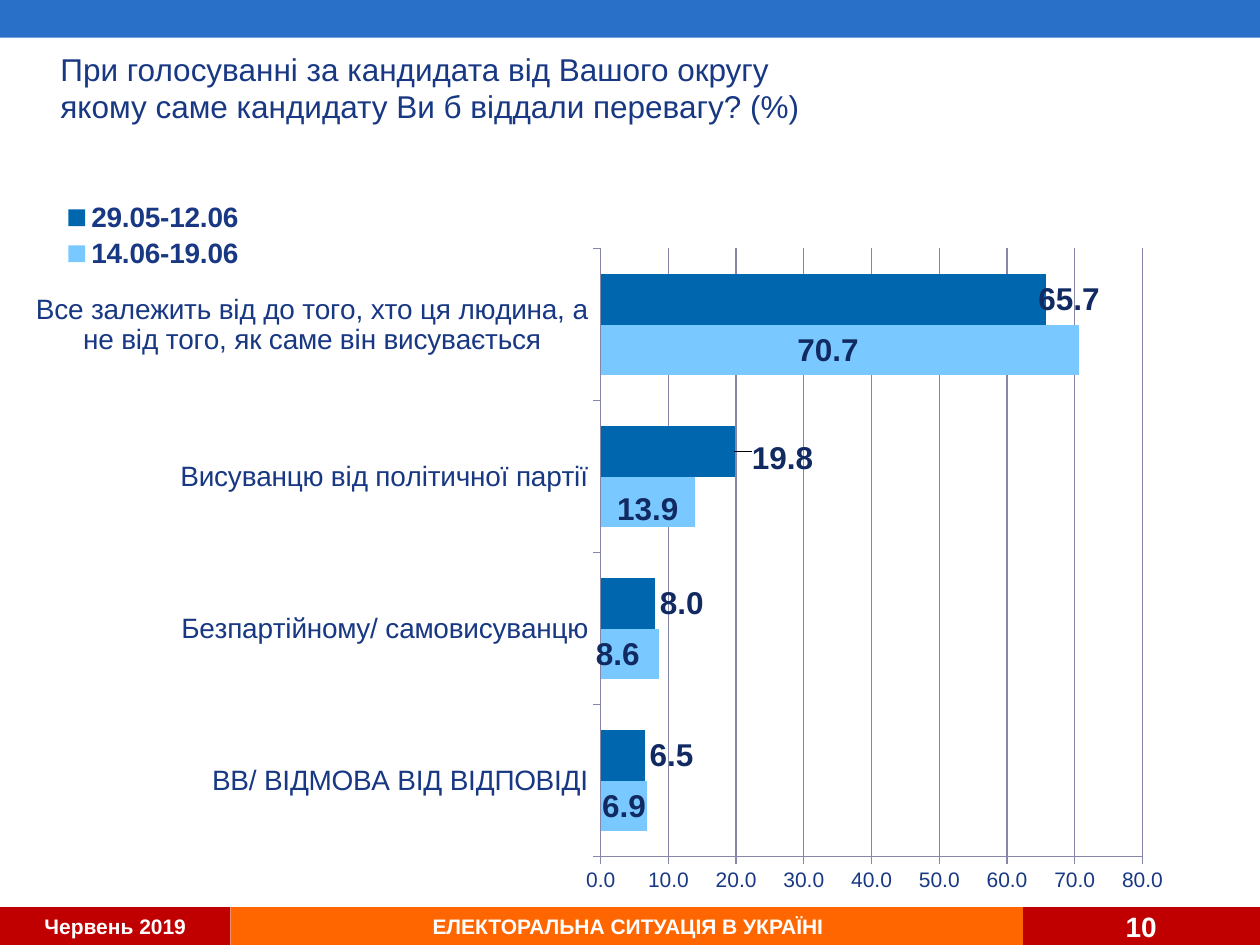
from lxml import etree
from pptx import Presentation
from pptx import util as u
from pptx.chart import data as chart_data
from pptx.dml.color import RGBColor
from pptx.enum import chart as ch, shapes, text
from pptx.oxml import ns

NAVY = RGBColor(0x18, 0x38, 0x83)
LABEL_NAVY = RGBColor(0x12, 0x2A, 0x62)
BLUE = RGBColor(0x28, 0x70, 0xC8)
RED = RGBColor(0xC0, 0x00, 0x00)
ORANGE = RGBColor(0xFF, 0x66, 0x00)
WHITE = RGBColor(0xFF, 0xFF, 0xFF)
LIGHT_BAR = RGBColor(0x79, 0xC8, 0xFF)
DARK_BAR = RGBColor(0x00, 0x67, 0xAF)
GRID_GREY = RGBColor(0x86, 0x86, 0xA8)

WIDTH, HEIGHT = 10, 7.5
BAND = 0.04  # share of the slide height taken by the top and bottom bands

CATEGORIES = [
    "ВВ/ ВІДМОВА ВІД ВІДПОВІДІ",
    "Безпартійному/ самовисуванцю",
    "Висуванцю від політичної партії",
    "Все залежить від до того, хто ця людина, а не від того, як саме він висувається",
]
# Label shifts are shares of the chart's size, keyed by category index.
SERIES = [
    dict(name="14.06-19.06", values=(6.9, 8.6, 13.9, 70.7), color=LIGHT_BAR,
         position=ch.XL_LABEL_POSITION.CENTER,
         shifts={0: (0, 0), 1: (-0.01, 0), 2: (0, 0.01), 3: (-0.01, 0)}),
    dict(name="29.05-12.06", values=(6.5, 8, 19.8, 65.7), color=DARK_BAR,
         position=ch.XL_LABEL_POSITION.OUTSIDE_END,
         shifts={2: (0.01, 0.01), 3: (-0.01, 0)}),
]


def box(left, top, width, height):
    """Turn shares of the slide's size into lengths."""
    return (u.Inches(left * WIDTH), u.Inches(top * HEIGHT),
            u.Inches(width * WIDTH), u.Inches(height * HEIGHT))


def apply(target, **values):
    for name, value in values.items():
        setattr(target, name, value)


def format_font(font, size, color, bold=False):
    apply(font, name="Arial", size=u.Pt(size), bold=bold)
    font.color.rgb = color


def add_band(slide, place, fill, label="", size=12,
             align=text.PP_ALIGN.CENTER, margin_right=0.1):
    shape = slide.shapes.add_shape(shapes.MSO_SHAPE.RECTANGLE, *box(*place))
    shape.shadow.inherit = False
    shape.fill.solid()
    shape.fill.fore_color.rgb = fill
    shape.line.fill.background()
    if label:
        frame = shape.text_frame
        apply(frame, word_wrap=True, vertical_anchor=text.MSO_ANCHOR.MIDDLE,
              margin_top=0, margin_bottom=0, margin_right=u.Inches(margin_right))
        paragraph = frame.paragraphs[0]
        apply(paragraph, text=label, alignment=align)
        format_font(paragraph.runs[0].font, size, WHITE, bold=True)


def format_title(title, wording):
    left, top, width, height = box(0.026, 0.044, 0.625, 0.097)
    apply(title, left=left, top=top, width=width, height=height)
    frame = title.text_frame
    apply(frame, text=wording, word_wrap=True, auto_size=text.MSO_AUTO_SIZE.NONE,
          vertical_anchor=text.MSO_ANCHOR.MIDDLE, margin_left=u.Inches(0.22))
    paragraph = frame.paragraphs[0]
    paragraph.alignment = text.PP_ALIGN.LEFT
    format_font(paragraph.runs[0].font, 18, NAVY)


def make_layout(**values):
    """Build a manual chart layout element."""
    layout = etree.Element(ns.qn("c:layout"))
    manual = etree.SubElement(layout, ns.qn("c:manualLayout"))
    for name, value in values.items():
        etree.SubElement(manual, ns.qn(f"c:{name}"), val=str(value))
    return layout


def place_part(parent, layout, before):
    """Replace a chart part's layout, putting it ahead of the named child."""
    for old in parent.findall(ns.qn("c:layout")):
        parent.remove(old)
    parent.find(ns.qn(before)).addprevious(layout)


def format_axis(axis, size):
    format_font(axis.tick_labels.font, size, NAVY)
    axis.major_tick_mark = ch.XL_TICK_MARK.OUTSIDE
    axis.minor_tick_mark = ch.XL_TICK_MARK.NONE
    axis.format.line.color.rgb = GRID_GREY


def format_series(series, settings):
    series.format.fill.solid()
    series.format.fill.fore_color.rgb = settings["color"]
    labels = series.data_labels
    apply(labels, show_value=True, number_format="0.0",
          number_format_is_linked=False, position=settings["position"])
    format_font(labels.font, 18, LABEL_NAVY, bold=True)
    for index, (x, y) in settings["shifts"].items():
        label = series.points[index].data_label
        format_font(label.font, 18, LABEL_NAVY, bold=True)
        label.position = settings["position"]
    for element in labels._element.findall(ns.qn("c:dLbl")):
        index = element.find(ns.qn("c:idx"))
        x, y = settings["shifts"][int(index.get("val"))]
        index.addnext(make_layout(x=x, y=y))


def add_bar_chart(slide):
    data = chart_data.CategoryChartData(number_format="0.0")
    data.categories = CATEGORIES
    for settings in SERIES:
        data.add_series(settings["name"], settings["values"])
    chart = slide.shapes.add_chart(
        ch.XL_CHART_TYPE.BAR_CLUSTERED, *box(0.016, 0.201, 0.962, 0.747), data).chart
    format_font(chart.font, 18, NAVY)
    apply(chart, has_title=False, has_legend=True)

    plot = chart.plots[0]
    apply(plot, gap_width=100, overlap=0, vary_by_categories=False)
    for series, settings in zip(plot.series, SERIES):
        format_series(series, settings)

    format_axis(chart.category_axis, 16)
    value_axis = chart.value_axis
    format_axis(value_axis, 12)
    apply(value_axis, minimum_scale=0, maximum_scale=80, major_unit=10,
          has_major_gridlines=True)
    value_axis.major_gridlines.format.line.color.rgb = GRID_GREY
    apply(value_axis.tick_labels, number_format="0.0", number_format_is_linked=False)

    legend = chart.legend
    apply(legend, position=ch.XL_LEGEND_POSITION.RIGHT, include_in_layout=False)
    format_font(legend.font, 16, NAVY, bold=True)
    place_part(legend._element, make_layout(
        xMode="edge", yMode="edge", x=0.01, y=0.01, w=0.2, h=0.11), "c:overlay")
    plot_area = chart._chartSpace.chart.plotArea
    place_part(plot_area, make_layout(
        layoutTarget="inner", xMode="edge", yMode="edge",
        x=0.479, y=0.083, w=0.447, h=0.862), "c:barChart")


def main():
    presentation = Presentation()
    apply(presentation, slide_width=u.Inches(WIDTH), slide_height=u.Inches(HEIGHT))
    slide = presentation.slides.add_slide(presentation.slide_layouts[5])
    footer = 1 - BAND
    add_band(slide, (0, footer, 0.183, BAND), RED, "Червень 2019")
    add_band(slide, (0.183, footer, 0.631, BAND), ORANGE,
             "ЕЛЕКТОРАЛЬНА СИТУАЦІЯ В УКРАЇНІ")
    add_band(slide, (0, 0, 1, BAND), BLUE)
    add_band(slide, (0.812, footer, 0.188, BAND), RED, "10", size=16,
             align=text.PP_ALIGN.RIGHT, margin_right=0.82)
    add_bar_chart(slide)
    format_title(slide.shapes.title, "При голосуванні за кандидата від Вашого округу "
                 "якому саме кандидату Ви б віддали перевагу? (%)")
    presentation.save("out.pptx")


if __name__ == "__main__":
    main()
